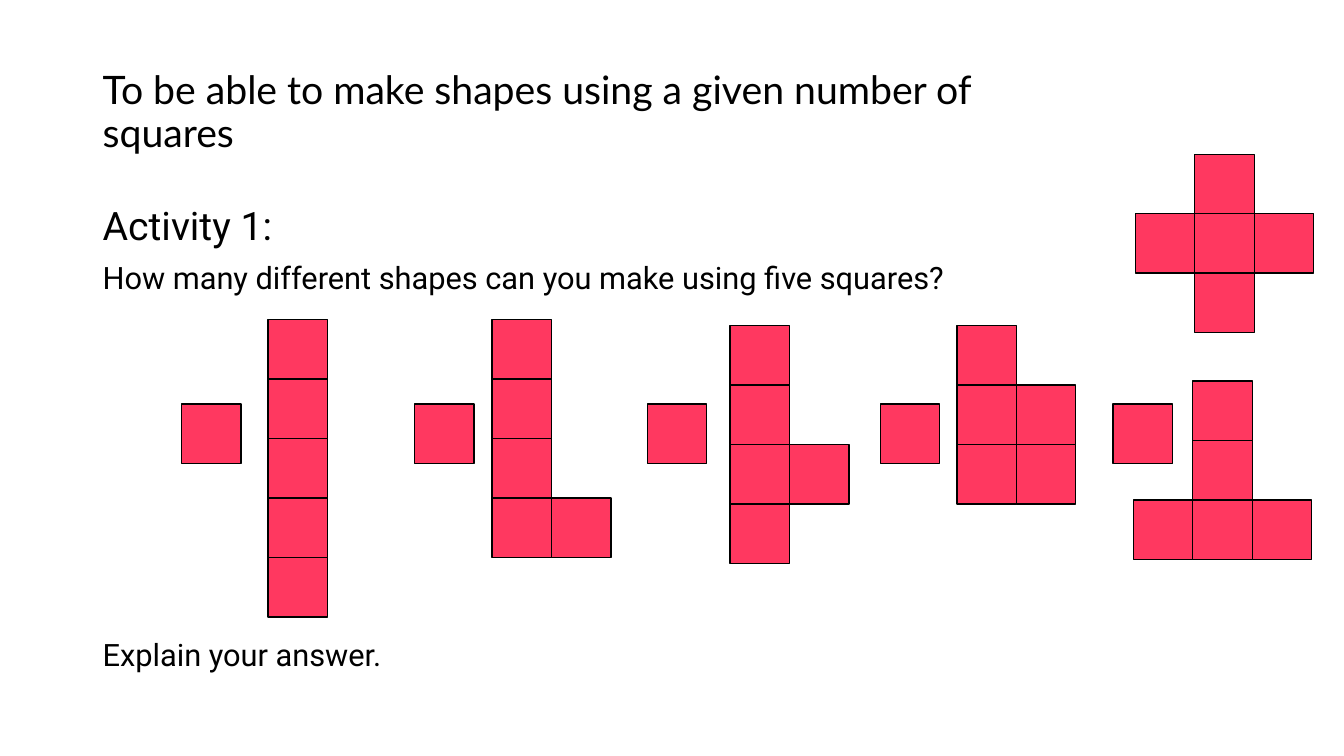
"""Build a slide about making shapes from five squares."""
from pptx import Presentation
from pptx.dml.color import RGBColor
from pptx.enum.shapes import MSO_SHAPE
from pptx.enum.text import MSO_ANCHOR
from pptx.util import Inches, Pt

RECTANGLE = MSO_SHAPE.RECTANGLE
TOP, MIDDLE = MSO_ANCHOR.TOP, MSO_ANCHOR.MIDDLE
BLACK = RGBColor(0x00, 0x00, 0x00)
PINK = RGBColor(0xFF, 0x38, 0x60)
SIDE = 0.59
TEXT_LEFT = 0.92

LONE_LEFT, LONE_TOP, LONE_STEP, LONE_COUNT = 1.8, 4.01, 2.31, 5

PENTOMINOES = [
    (2.66, 3.17, ["#", "#", "#", "#", "#"]),
    (4.88, 3.17, ["#.", "#.", "#.", "##"]),
    (7.24, 3.23, ["#.", "#.", "##", "#."]),
    (9.49, 3.23, ["#.", "##", "##"]),
    (11.24, 3.78, [".#.", ".#.", "###"]),
    (11.26, 1.53, [".#.", "###", ".#."]),
]


def add_text(slide, left, top, width, height, lines, font="Roboto", anchor=TOP):
    """Add a text box with one paragraph for each (text, size) pair."""
    box = slide.shapes.add_textbox(Inches(left), Inches(top), Inches(width), Inches(height))
    frame = box.text_frame
    frame.word_wrap = True
    frame.vertical_anchor = anchor
    for index, (text, size) in enumerate(lines):
        para = frame.add_paragraph() if index else frame.paragraphs[0]
        para.line_spacing = 0.9
        if index:
            para.space_before = Pt(10)
        span = para.add_run()
        span.text = text
        span.font.name = font
        span.font.size = Pt(size)
        span.font.color.rgb = BLACK


def add_square(slide, left, top):
    """Add one outlined pink square."""
    square = slide.shapes.add_shape(
        RECTANGLE, Inches(left), Inches(top), Inches(SIDE), Inches(SIDE))
    square.shadow.inherit = False
    square.fill.solid()
    square.fill.fore_color.rgb = PINK
    square.line.color.rgb = BLACK
    square.line.width = Pt(1)


def add_pentomino(slide, left, top, rows):
    """Add a square for every filled cell of a pattern."""
    for row, cells in enumerate(rows):
        for column, cell in enumerate(cells):
            if cell == "#":
                add_square(slide, left + column * SIDE, top + row * SIDE)


def main():
    """Create the deck and save it."""
    deck = Presentation()
    deck.slide_width, deck.slide_height = Inches(13.33), Inches(7.5)
    page = deck.slides.add_slide(deck.slide_layouts[6])

    add_text(page, TEXT_LEFT, 0.4, 9.6, 1.45,
             [("To be able to make shapes using a given number of squares", 28)],
             font="Lato", anchor=MIDDLE)
    add_text(page, TEXT_LEFT, 2, 10, 1.05,
             [("Activity 1:", 28),
              ("How many different shapes can you make using five squares?", 22)])
    add_text(page, TEXT_LEFT, 6.3, 11.5, 0.46, [("Explain your answer.", 22)])

    for index in range(LONE_COUNT):
        add_square(page, LONE_LEFT + index * LONE_STEP, LONE_TOP)
    for left, top, rows in PENTOMINOES:
        add_pentomino(page, left, top, rows)

    deck.save("out.pptx")


if __name__ == "__main__":
    main()
